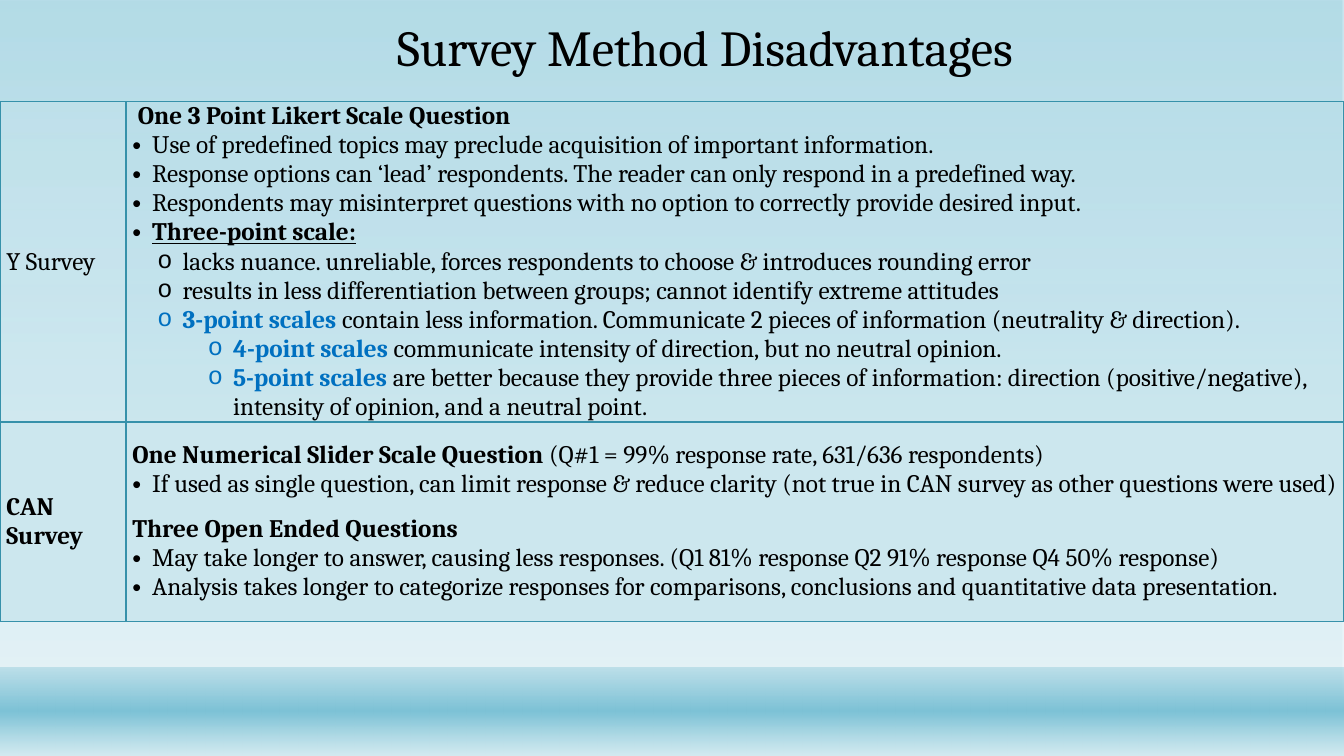
from lxml.etree import SubElement
from pptx import Presentation
from pptx.dml.color import RGBColor
from pptx.enum.shapes import MSO_SHAPE as Shape
from pptx.enum.text import MSO_ANCHOR as Anchor, MSO_AUTO_SIZE as AutoSize, PP_ALIGN as Align
from pptx.oxml.ns import qn
from pptx.util import Pt

PX = 9525  # EMU in one px, 96 px to the inch
WIDTH, HEIGHT = 1280, 720
FONT = "Cambria"
BLACK, BLUE, TEAL = "000000", "0070C0", "3691AA"
AQUA, PALE = "7DC2D6", "D4EBF1"

# Bullet kinds: level, left margin, hanging indent (px), character, font
BULLETS = {
    "dot": (0, 19, 19, "•", "Arial"),
    "ring": (1, 48, 24, "o", "Courier New"),
    "deep ring": (2, 96, 24, "o", "Courier New"),
}
BOLD = {"bold": True}
KEY = {"bold": True, "color": BLUE}

# Each paragraph: bullet kind, space before in points, runs of text and format
Y_SURVEY = [
    (None, 0, [(" One 3 Point Likert Scale Question", BOLD)]),
    ("dot", 0, [("Use of predefined topics may preclude acquisition of important information.", {})]),
    ("dot", 0, [("Response options can ‘lead’ respondents. The reader can only respond in a predefined way.", {})]),
    ("dot", 0, [("Respondents may misinterpret questions with no option to correctly provide desired input.", {})]),
    ("dot", 0, [("Three-point scale:", {"bold": True, "underline": True})]),
    ("ring", 0, [("lacks nuance. unreliable, forces respondents to choose & introduces rounding error", {})]),
    ("ring", 0, [("results in less differentiation between groups; cannot identify extreme attitudes", {})]),
    ("ring", 0, [("3-point scales ", KEY),
                 ("contain less information. Communicate 2 pieces of information (neutrality & direction).", {})]),
    ("deep ring", 0, [("4-point scales ", KEY),
                      ("communicate intensity of direction, but no neutral opinion.", {})]),
    ("deep ring", 0, [("5-point scales ", KEY),
                      ("are better because they provide three pieces of information: direction "
                       "(positive/negative), intensity of opinion, and a neutral point.", {})]),
]
CAN_SURVEY = [
    (None, 0, [("One Numerical Slider Scale Question ", BOLD),
               ("(Q#1 = 99% response rate, 631/636 respondents)", {})]),
    ("dot", 0, [("If used as single question, can limit response & reduce clarity "
                 "(not true in CAN survey as other questions were used)", {})]),
    (None, 11.5, [("Three Open Ended Questions", BOLD)]),
    ("dot", 0, [("May take longer to answer, causing less responses. "
                 "(Q1 81% response Q2 91% response Q4 50% response)", {})]),
    ("dot", 0, [("Analysis takes longer to categorize responses for comparisons, "
                 "conclusions and quantitative data presentation.", {})]),
]


def px(*lengths):
    return [length * PX for length in lengths]


def rgb(color):
    return RGBColor.from_string(color)


def add_color(parent, color, alpha=100):
    element = SubElement(parent, qn("a:srgbClr"), val=color)
    if alpha < 100:
        SubElement(element, qn("a:alpha"), val=str(alpha * 1000))


def add_text(paragraph, text, size=18, color=BLACK, bold=False, underline=False):
    run = paragraph.add_run()
    run.text = text
    font = run.font
    font.name, font.size, font.bold = FONT, Pt(size), bold
    font.color.rgb = rgb(color)
    if underline:
        font.underline = True


def add_bullet(paragraph, kind):
    level, margin, hanging, character, font = BULLETS[kind]
    paragraph.level = level
    properties = paragraph._p.get_or_add_pPr()
    properties.set("marL", str(margin * PX))
    properties.set("indent", str(-hanging * PX))
    SubElement(properties, qn("a:buFont"), typeface=font)
    SubElement(properties, qn("a:buChar"), char=character)


def add_gradient_band(slide, top, height, stops):
    shape = slide.shapes.add_shape(Shape.RECTANGLE, *px(0, top, WIDTH, height))
    shape.shadow.inherit = False
    shape.line.fill.background()
    shape.fill.gradient()
    shape.fill.gradient_angle = 270
    stop_list = shape._element.spPr.find(".//" + qn("a:gsLst"))
    for stop in list(stop_list):
        stop_list.remove(stop)
    for position, color, alpha in stops:
        stop = SubElement(stop_list, qn("a:gs"), pos=str(position * 1000))
        add_color(stop, color, alpha)


def set_borders(cell, **widths):
    properties = cell._tc.get_or_add_tcPr()
    for side in "LRTB":
        line = SubElement(properties, qn("a:ln" + side), w=str(Pt(widths.get(side, 1))))
        add_color(SubElement(line, qn("a:solidFill")), TEAL)


def fill_cell(cell, paragraphs, color, alpha, **borders):
    set_borders(cell, **borders)
    cell.fill.solid()
    cell.fill.fore_color.rgb = rgb(color)
    if alpha < 100:
        fill_color = cell._tc.tcPr.find(qn("a:solidFill")).find(qn("a:srgbClr"))
        SubElement(fill_color, qn("a:alpha"), val=str(alpha * 1000))
    cell.vertical_anchor = Anchor.MIDDLE
    cell.margin_left = cell.margin_right = 6 * PX
    cell.margin_top = cell.margin_bottom = 0
    frame = cell.text_frame
    for index, (bullet, space, runs) in enumerate(paragraphs):
        paragraph = frame.add_paragraph() if index else frame.paragraphs[0]
        if bullet:
            add_bullet(paragraph, bullet)
        if space:
            paragraph.space_before = Pt(space)
        for text, style in runs:
            add_text(paragraph, text, **style)


def add_survey_table(slide):
    columns, rows = (120, 1160), (274, 190)
    frame = slide.shapes.add_table(2, 2, *px(0, 97, sum(columns), sum(rows)))
    table = frame.table
    table.first_row = table.horz_banding = False
    for column, width in zip(table.columns, columns):
        column.width = width * PX
    for row, height in zip(table.rows, rows):
        row.height = height * PX

    y_label = [(None, 0, [("Y Survey", {})])]
    can_label = [(None, 0, [("CAN Survey", BOLD)])]
    fill_cell(table.cell(0, 0), y_label, PALE, 20, B=2)
    fill_cell(table.cell(0, 1), Y_SURVEY, "BADFE9", 20, B=2)
    fill_cell(table.cell(1, 0), can_label, "CCE7EE", 100, T=2)
    fill_cell(table.cell(1, 1), CAN_SURVEY, "CCE7EE", 100, T=2)


def set_title(slide, text):
    title = slide.shapes.title
    title.left, title.top, title.width, title.height = px(115, 15, 1113, 64)
    frame = title.text_frame
    frame.word_wrap = True
    frame.auto_size = AutoSize.NONE
    frame.vertical_anchor = Anchor.BOTTOM
    paragraph = frame.paragraphs[0]
    paragraph.alignment = Align.CENTER
    paragraph.line_spacing = 0.9
    add_text(paragraph, text, size=36)
    # Bring the title in front of the background bands
    title._element.getparent().append(title._element)


def main():
    presentation = Presentation()
    presentation.slide_width, presentation.slide_height = px(WIDTH, HEIGHT)
    slide = presentation.slides.add_slide(presentation.slide_layouts[5])

    # Background
    add_gradient_band(slide, 0, HEIGHT, [(0, AQUA, 58), (88, PALE, 65)])
    add_gradient_band(slide, 636, 84, [(1, AQUA, 38), (49, AQUA, 100), (100, PALE, 89)])

    # Content
    add_survey_table(slide)
    set_title(slide, "Survey Method Disadvantages")
    presentation.save("out.pptx")


if __name__ == "__main__":
    main()
